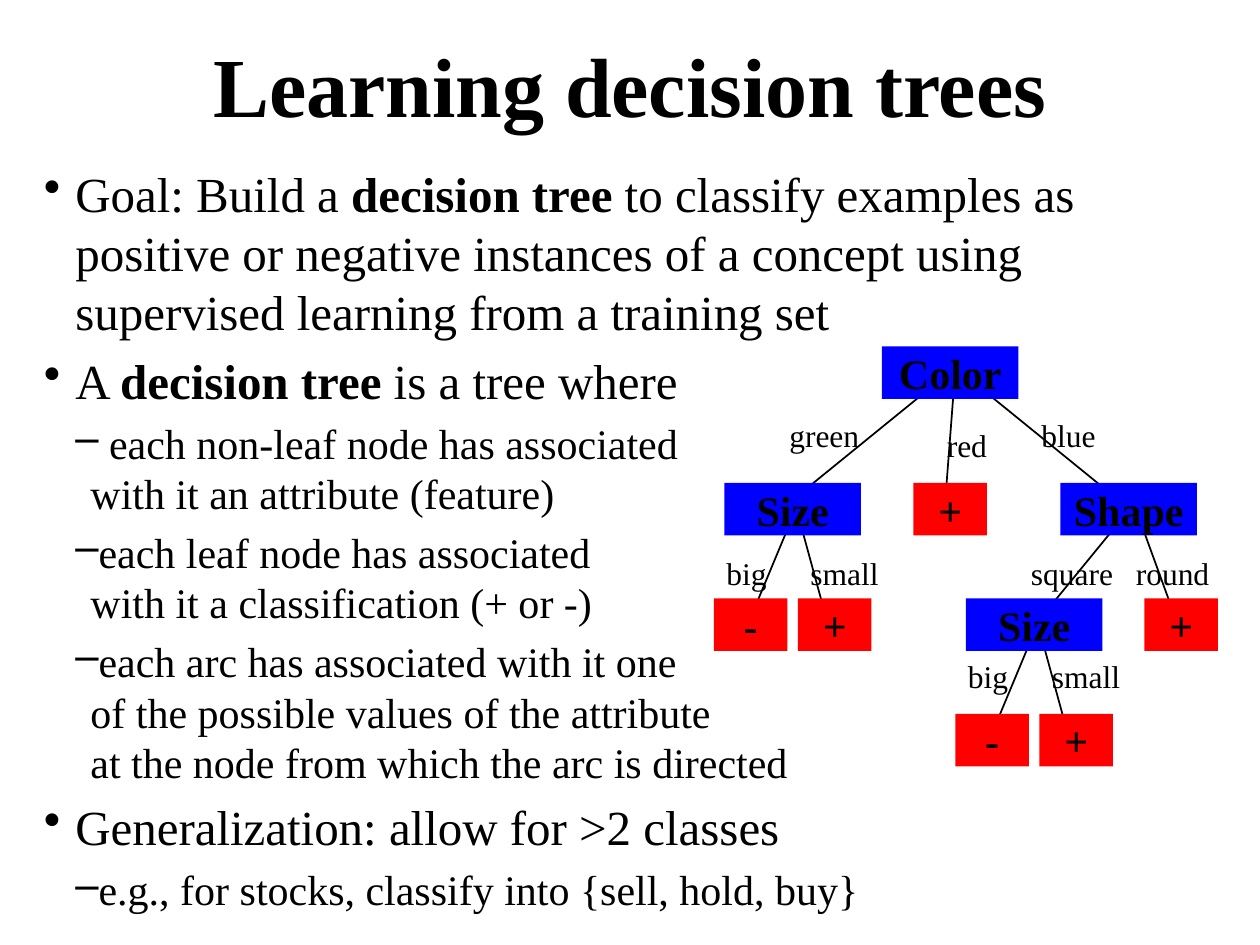
from lxml import etree
from pptx import Presentation
from pptx import util as u
from pptx.dml.color import RGBColor
from pptx.enum import shapes, text
from pptx.oxml import ns

BLACK = RGBColor(0, 0, 0)
BLUE = RGBColor(0, 0, 255)
RED = RGBColor(255, 0, 0)
FONT = "Times New Roman"
CELL = u.Inches(10) // 120  # the slide is a grid of 120 columns by 90 rows
NODE_H = 5

# Outline level: (size in points, left margin, first-line indent, bullet)
LEVELS = [(28, 0.25, -0.25, "•"), (24, 0.37, -0.12, "–")]

# (level, text); ** switches bold on and off
OUTLINE = [
    (0, "Goal: Build a **decision tree** to classify examples as positive or "
        "negative instances of a concept using supervised learning from a training set"),
    (0, "A **decision tree** is a tree where"),
    (1, " each non-leaf node has associated\nwith it an attribute (feature)"),
    (1, "each leaf node has associated\nwith it a classification (+ or -)"),
    (1, "each arc has associated with it one\nof the possible values of the attribute\n"
        "at the node from which the arc is directed"),
    (0, "Generalization: allow for >2 classes"),
    (1, "e.g., for stocks, classify into {sell, hold, buy}"),
]

# (start column, start row, end column, end row)
ARCS = [
    (91, 35, 75, 48), (91, 35, 90, 48), (91, 35, 107, 48),
    (76, 48, 71, 60), (76, 49, 79, 60),
    (99, 59, 94, 71), (99, 60, 102, 71),
    (108, 48, 99, 59), (108, 48, 112, 59),
]

# (text, column, row)
ATTRIBUTES = [("Color", 84, 33), ("Shape", 101, 46), ("Size", 69, 46), ("Size", 92, 57)]
LEAVES = [("+", 87, 46), ("+", 76, 57), ("-", 68, 57),
          ("+", 99, 68), ("-", 91, 68), ("+", 109, 57)]
VALUES = [
    ("big", 91, 62), ("big", 68, 52.2), ("small", 76, 52.2), ("small", 99, 62),
    ("round", 107, 52.2), ("square", 97, 52.2),
    ("red", 89, 40), ("green", 74, 39), ("blue", 98, 39),
]
VALUE_WIDTHS = {"big": 6.2, "small": 8.9, "round": 9.4, "square": 10.2,
                "red": 6.2, "green": 9.1, "blue": 7.6}


def grid(*cells):
    return [round(c * CELL) for c in cells]


def set_format(obj, **values):
    for name, value in values.items():
        setattr(obj, name, value)


def add_run(p, words, size, bold=False):
    r = p.add_run()
    r.text = words
    set_format(r.font, name=FONT, size=u.Pt(size), bold=bold)
    r.font.color.rgb = BLACK


def add_title(s, words):
    tf = s.shapes.add_textbox(*grid(9, 1, 102, 14)).text_frame
    set_format(tf, word_wrap=True, vertical_anchor=text.MSO_ANCHOR.MIDDLE)
    p = tf.paragraphs[0]
    p.alignment = text.PP_ALIGN.CENTER
    add_run(p, words, 48, True)


def add_outline(s, items):
    tf = s.shapes.add_textbox(*grid(3, 15, 101, 63)).text_frame
    tf.word_wrap = True
    for i, (level, words) in enumerate(items):
        size, margin, indent, bullet = LEVELS[level]
        p = tf.add_paragraph() if i else tf.paragraphs[0]
        set_format(p, level=level, space_before=u.Pt(size * 0.2))
        pPr = p._p.get_or_add_pPr()
        pPr.set("marL", str(u.Inches(margin)))
        pPr.set("indent", str(u.Inches(indent)))
        etree.SubElement(pPr, ns.qn("a:buChar")).set("char", bullet)
        for j, part in enumerate(words.split("**")):
            for k, line in enumerate(part.split("\n")):
                if k:
                    p.add_line_break()
                add_run(p, line, size, j % 2 == 1)


def add_arc(tree, *ends):
    arc = tree.shapes.add_connector(shapes.MSO_CONNECTOR.STRAIGHT, *grid(*ends))
    arc.line.color.rgb = BLACK
    arc.line.width = u.Pt(1)
    etree.SubElement(arc._element.spPr, ns.qn("a:effectLst"))


def add_node(tree, words, col, row, width, color):
    sp = tree.shapes.add_shape(shapes.MSO_SHAPE.RECTANGLE, *grid(col, row, width, NODE_H))
    sp.shadow.inherit = False
    sp.fill.solid()
    sp.fill.fore_color.rgb = color
    sp.line.fill.background()
    tf = sp.text_frame
    set_format(tf, word_wrap=False, vertical_anchor=text.MSO_ANCHOR.MIDDLE)
    p = tf.paragraphs[0]
    p.alignment = text.PP_ALIGN.CENTER
    add_run(p, words, 24, True)


def add_value(tree, words, col, row):
    box = tree.shapes.add_textbox(*grid(col, row, VALUE_WIDTHS[words], 4.8))
    tf = box.text_frame
    set_format(tf, word_wrap=False, auto_size=text.MSO_AUTO_SIZE.SHAPE_TO_FIT_TEXT)
    add_run(tf.paragraphs[0], words, 18)


def add_tree(s):
    tree = s.shapes.add_group_shape()
    for arc in ARCS:
        add_arc(tree, *arc)
    for node in ATTRIBUTES:
        add_node(tree, *node, 13, BLUE)
    for node in LEAVES:
        add_node(tree, *node, 7, RED)
    for value in VALUES:
        add_value(tree, *value)


def main():
    prs = Presentation()
    set_format(prs, slide_width=u.Inches(10), slide_height=u.Inches(7.5))
    s = prs.slides.add_slide(prs.slide_layouts[6])
    add_title(s, "Learning decision trees")
    add_outline(s, OUTLINE)
    add_tree(s)
    prs.save("out.pptx")


if __name__ == "__main__":
    main()
